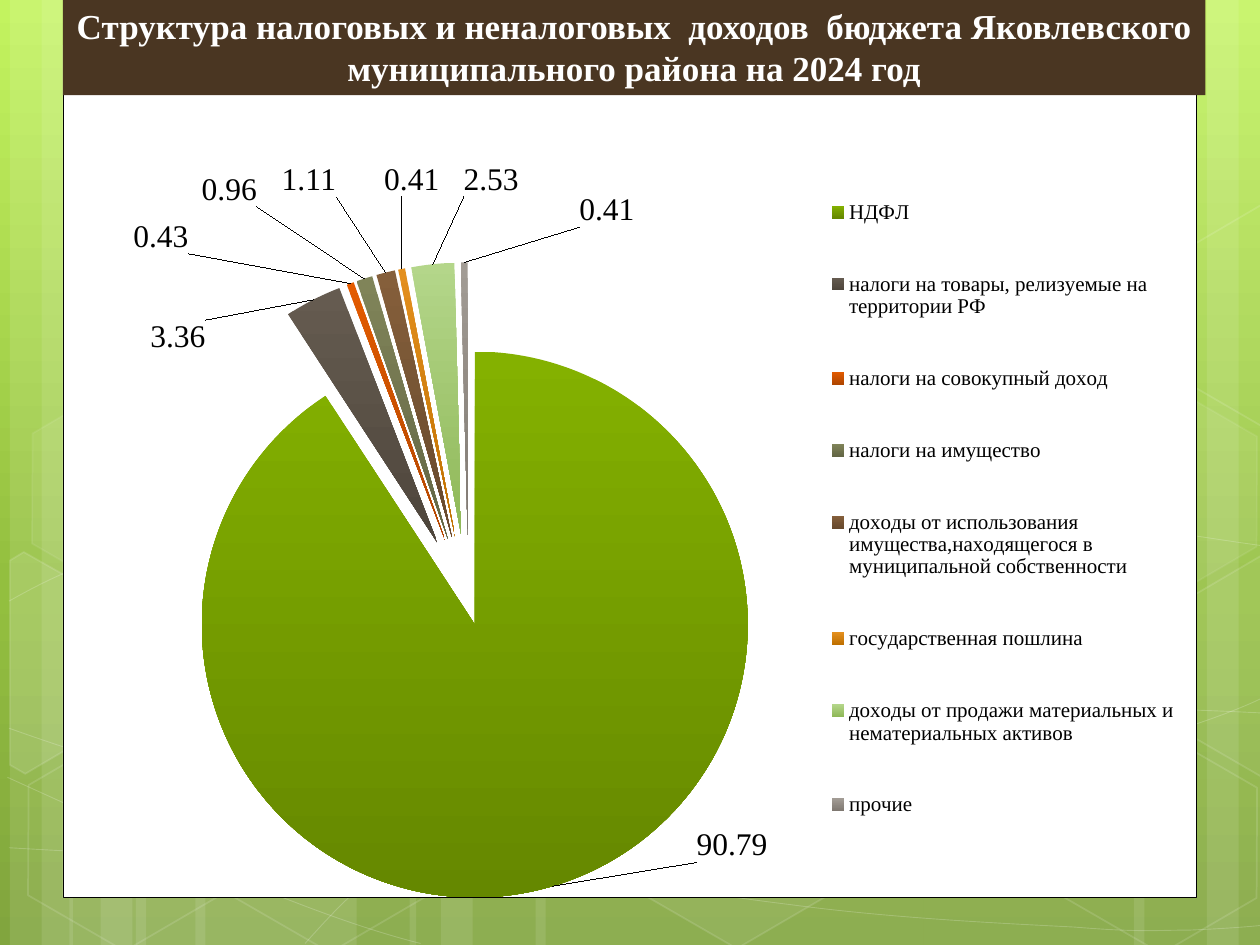
"""Build a slide with the tax and non-tax revenue structure of a district budget."""
from copy import deepcopy
from dataclasses import dataclass
from typing import Any, Optional

from pptx import Presentation
from pptx.chart.data import CategoryChartData
from pptx.dml.color import RGBColor
from pptx.enum.chart import XL_CHART_TYPE, XL_LABEL_POSITION, XL_LEGEND_POSITION
from pptx.enum.shapes import MSO_SHAPE
from pptx.enum.text import MSO_ANCHOR, MSO_AUTO_SIZE, PP_ALIGN
from pptx.oxml import parse_xml
from pptx.oxml.ns import nsdecls
from pptx.oxml.xmlchemy import OxmlElement
from pptx.util import Cm, Pt

Point = tuple[float, float]


@dataclass(frozen=True)
class Theme:
    white: str = "FFFFFF"
    black: str = "000000"
    banner: str = "4A3622"
    backdrop: tuple = ((0, "C3F35F"), (0.62, "93BF3F"), (1, "81A53E"))
    serif: str = "Times New Roman"
    sans: str = "TeX Gyre Adventor"
    title_size: Pt = Pt(20)
    label_size: Pt = Pt(18)
    legend_size: Pt = Pt(12)


@dataclass(frozen=True)
class Hexagon:
    left: float
    top: float
    fill_alpha: Optional[int] = None
    line_alpha: int = 12


@dataclass(frozen=True)
class Outline:
    points: list[Point]
    fill_alpha: Optional[int] = None
    line_alpha: int = 12
    line_width: float = 1
    curved: bool = False


@dataclass(frozen=True)
class Slice:
    name: str
    value: float
    top_color: str
    bottom_color: str
    label_shift: Point


THEME = Theme()
CHART_WIDTH, CHART_HEIGHT = 24.2, 16
TITLE = ("Структура налоговых и неналоговых  доходов  бюджета Яковлевского "
         "муниципального района на 2024 год")
STRIPS = [(2.74, 4.45), (0.2, 1.27), (0.84, 2.11), (3.94, 4.45), (1.4, 1.27), (2.03, 2.11),
          (18.62, 4.45), (24.33, 1.27), (22.86, 2.11), (10.8, 7.82), (8.26, 1.27), (8.89, 2.11)]
CURVES = [
    [(0.18, 17.09), (1.55, 17.17), (2.92, 17.25), (4.83, 17.22), (6.73, 17.2), (9.09, 17.15),
     (11.63, 16.89), (14.17, 16.64), (17.78, 16.15), (20.12, 15.67), (22.43, 15.19),
     (24.82, 14.43), (25.58, 14)],
    [(0.18, 12.12), (0.91, 11.71), (1.65, 11.33), (3.07, 10.95), (4.55, 10.57), (6.58, 10.01),
     (8.81, 9.83), (11.07, 9.65), (13.82, 9.63), (16.61, 9.83), (19.41, 10.03),
     (24.05, 10.82), (25.58, 11.02)],
    [(0.15, 15.67), (3.23, 17.07), (6.27, 18.47), (8.48, 19.02)],
    [(0.18, 14.68), (0.97, 14.96), (1.78, 15.24), (3.25, 15.65), (4.72, 16.03), (6.93, 16.66),
     (9.07, 17.09), (11.18, 17.53), (13.84, 17.98), (15.95, 18.24), (18.06, 18.52),
     (20.32, 18.62), (21.67, 18.69), (22.99, 18.8), (23.34, 18.75), (24, 18.75),
     (24.66, 18.72), (25.12, 18.69), (25.58, 18.64)],
    [(6.15, 19.02), (6.6, 18.52), (7.06, 18.01), (7.67, 17.55), (8.28, 17.09), (9.14, 16.59),
     (9.86, 16.23), (10.57, 15.88), (11, 15.72), (11.94, 15.47), (12.85, 15.21),
     (14.55, 14.86), (15.44, 14.68), (16.36, 14.5), (16.48, 14.5), (17.27, 14.45),
     (18.06, 14.38), (19.3, 14.3), (20.17, 14.27), (21.6, 14.25), (23.5, 14.27), (25.55, 14.38)],
]
HEXAGONS = [Hexagon(12.62, 14.96, 6), Hexagon(0.28, 15.01), Hexagon(0.36, 7.92, 7, 8),
            Hexagon(4.42, 15.04), Hexagon(21.18, 15.06), Hexagon(21.18, 7.98, 7, 8)]
LEFT_CUT = [(0.2, 11.3), (0.48, 11.13), (2.44, 12.24), (2.41, 14.48), (0.51, 15.6), (0.2, 15.42)]
RIGHT_CUT = [(23.52, 12.32), (25.43, 11.2), (25.63, 11.33), (25.63, 15.57), (25.45, 15.67),
             (23.52, 14.55)]
UPPER_CUT = [(x, y - 7.07) for x, y in RIGHT_CUT]
SLICES = [
    Slice("НДФЛ", 90.79, "84B100", "658800", (2.86, -1.31)),
    Slice("налоги на товары, релизуемые на территории РФ", 3.36, "655B50", "4E463C", (-2.1, 1.23)),
    Slice("налоги на совокупный доход", 0.43, "E35B00", "B04600", (-3.21, -0.46)),
    Slice("налоги на имущество", 0.96, "808459", "636645", (-2.12, -1.31)),
    Slice("доходы от использования имущества,находящегося в муниципальной собственности",
          1.11, "855F3B", "67492D", (-0.95, -1.37)),
    Slice("государственная пошлина", 0.41, "E38F1E", "BF7000", (0.79, -1.31)),
    Slice("доходы от продажи материальных и нематериальных активов",
          2.53, "B4D68A", "8FB858", (1.75, -1.21)),
    Slice("прочие", 0.41, "A29C95", "7F7871", (2.88, -0.56)),
]


def assign(target: Any, **values: Any) -> None:
    for name, value in values.items():
        setattr(target, name, value)


def set_font(font: Any, name: str, size: Pt, color: str, bold: bool = False) -> None:
    assign(font, name=name, size=size, bold=bold)
    font.color.rgb = RGBColor.from_string(color)


def paint(target: Any, color: str, alpha: Optional[int], color_path: str, shape: Any) -> None:
    target.solid()
    target.fore_color.rgb = RGBColor.from_string(color)
    if alpha is not None:
        shape.element.spPr.xpath(color_path)[0].append(make_value("a:alpha", alpha * 1000))


def make_value(tag: str, value: int) -> Any:
    element = OxmlElement(tag)
    element.set("val", str(value))
    return element


def style(shape: Any, fill: Optional[str], line: Optional[str] = None, width: float = 1,
          fill_alpha: Optional[int] = None, line_alpha: Optional[int] = None) -> None:
    shape.shadow.inherit = False
    if fill:
        paint(shape.fill, fill, fill_alpha, "a:solidFill/a:srgbClr", shape)
    else:
        shape.fill.background()
    if line:
        paint(shape.line.fill, line, line_alpha, "a:ln/a:solidFill/a:srgbClr", shape)
        shape.line.width = Pt(width)
    else:
        shape.line.fill.background()


def add_box(page: Any, left: float, top: float, width: float, height: float,
            kind: MSO_SHAPE = MSO_SHAPE.RECTANGLE) -> Any:
    return page.shapes.add_shape(kind, Cm(left), Cm(top), Cm(width), Cm(height))


def bend(shape: Any) -> None:
    lines = shape.element.xpath(".//a:path/a:lnTo")
    for start in range(0, len(lines), 3):
        curve = OxmlElement("a:cubicBezTo")
        lines[start].addprevious(curve)
        for line in lines[start:start + 3]:
            curve.append(line[0])
            line.getparent().remove(line)


def add_outline(page: Any, outline: Outline) -> None:
    points = [(Cm(x), Cm(y)) for x, y in outline.points]
    builder = page.shapes.build_freeform(*points[0])
    builder.add_line_segments(points[1:], close=not outline.curved)
    shape = builder.convert_to_shape()
    if outline.curved:
        bend(shape)
    style(shape, THEME.white if outline.fill_alpha else None, THEME.white,
          outline.line_width, outline.fill_alpha, outline.line_alpha)


def fill_gradient(fill: Any, stops: tuple) -> None:
    fill.gradient_angle = 270
    for stop, (position, color) in zip(fill.gradient_stops, stops):
        stop.position = position
        stop.color.rgb = RGBColor.from_string(color)


def add_backdrop(page: Any) -> None:
    fill = page.background.fill
    fill.gradient()
    stops = page.element.xpath(".//p:bgPr//a:gsLst")[0]
    stops.append(deepcopy(stops[-1]))
    fill_gradient(fill, THEME.backdrop)
    for left, width in STRIPS:
        style(add_box(page, left, 0, width, 19.05), THEME.white, fill_alpha=10)
    for knots in CURVES:
        add_outline(page, Outline(knots, None, 20, 0.5, True))
    for item in HEXAGONS:
        shape = add_box(page, item.left, item.top, 4.45, 3.86, MSO_SHAPE.HEXAGON)
        shape.rotation = 30
        shape.adjustments[0] = 0.285
        style(shape, THEME.white if item.fill_alpha else None, THEME.white, 1,
              item.fill_alpha, item.line_alpha)
    for points, alpha in ((LEFT_CUT, 10), (RIGHT_CUT, 4), (UPPER_CUT, None)):
        add_outline(page, Outline(points, alpha))


def add_title(page: Any) -> None:
    box = add_box(page, 1.27, -0.03, 23.03, 1.95)
    style(box, THEME.banner)
    assign(box.text_frame, word_wrap=True, vertical_anchor=MSO_ANCHOR.MIDDLE,
           auto_size=MSO_AUTO_SIZE.SHAPE_TO_FIT_TEXT)
    para = box.text_frame.paragraphs[0]
    para.alignment = PP_ALIGN.CENTER
    span = para.add_run()
    span.text = TITLE
    set_font(span.font, THEME.serif, THEME.title_size, THEME.white, True)


def make_layout(**values: Any) -> Any:
    parts = "".join(f'<c:{name} val="{value}"/>' for name, value in values.items())
    return parse_xml(f'<c:layout {nsdecls("c")}><c:manualLayout>{parts}</c:manualLayout></c:layout>')


def add_pie(page: Any) -> None:
    data = CategoryChartData()
    data.categories = [item.name for item in SLICES]
    data.add_series("Series 1", [item.value for item in SLICES])
    chart = page.shapes.add_chart(XL_CHART_TYPE.PIE, Cm(0.13), Cm(3.05), Cm(CHART_WIDTH),
                                  Cm(CHART_HEIGHT), data).chart
    assign(chart, has_title=False, has_legend=True)
    set_font(chart.font, THEME.sans, THEME.label_size, THEME.black)
    assign(chart.legend, position=XL_LEGEND_POSITION.BOTTOM, include_in_layout=False)
    set_font(chart.legend.font, THEME.serif, THEME.legend_size, THEME.black)
    chart.plots[0].vary_by_categories = True
    series = chart.plots[0].series[0]
    set_font(series.data_labels.font, THEME.serif, THEME.label_size, THEME.black)
    assign(series.data_labels, show_value=True, position=XL_LABEL_POSITION.OUTSIDE_END)
    for index, item in enumerate(SLICES):
        point = series.points[index]
        point.format.fill.gradient()
        fill_gradient(point.format.fill, ((0, item.top_color), (1, item.bottom_color)))
        set_font(point.data_label.font, THEME.serif, THEME.label_size, THEME.black)
        point.data_label.position = XL_LABEL_POSITION.OUTSIDE_END
        x, y = item.label_shift
        chart.element.xpath(".//c:dLbl/c:idx")[index].addnext(
            make_layout(x=x / CHART_WIDTH, y=y / CHART_HEIGHT))
    first_point = chart.element.xpath(".//c:dPt")[0]
    first_point.addprevious(make_value("c:explosion", 25))
    first_point.xpath("c:spPr")[0].addprevious(make_value("c:explosion", 8))
    for layout in chart.element.xpath(".//c:plotArea/c:layout | .//c:legend/c:layout"):
        layout.getparent().remove(layout)
    chart.element.xpath(".//c:plotArea")[0].insert(0, make_layout(
        layoutTarget="inner", xMode="edge", yMode="edge", x=0.1, y=0.14, w=0.57, h=0.86))
    chart.element.xpath(".//c:legendPos")[0].addnext(make_layout(
        xMode="edge", yMode="edge", x=0.68, y=0, w=0.3, h=0.9))
    chart.element.xpath("c:chart")[0].addnext(parse_xml(
        f'<c:spPr {nsdecls("c", "a")}><a:noFill/><a:ln><a:noFill/></a:ln></c:spPr>'))


def main() -> None:
    deck = Presentation()
    assign(deck, slide_width=Cm(25.4), slide_height=Cm(19.05))
    page = deck.slides.add_slide(deck.slide_layouts[6])
    add_backdrop(page)
    style(add_box(page, 1.27, 0.91, 22.86, 17.19), THEME.white, THEME.black, 0.5)
    add_title(page)
    add_pie(page)
    deck.save("out.pptx")


if __name__ == "__main__":
    main()
